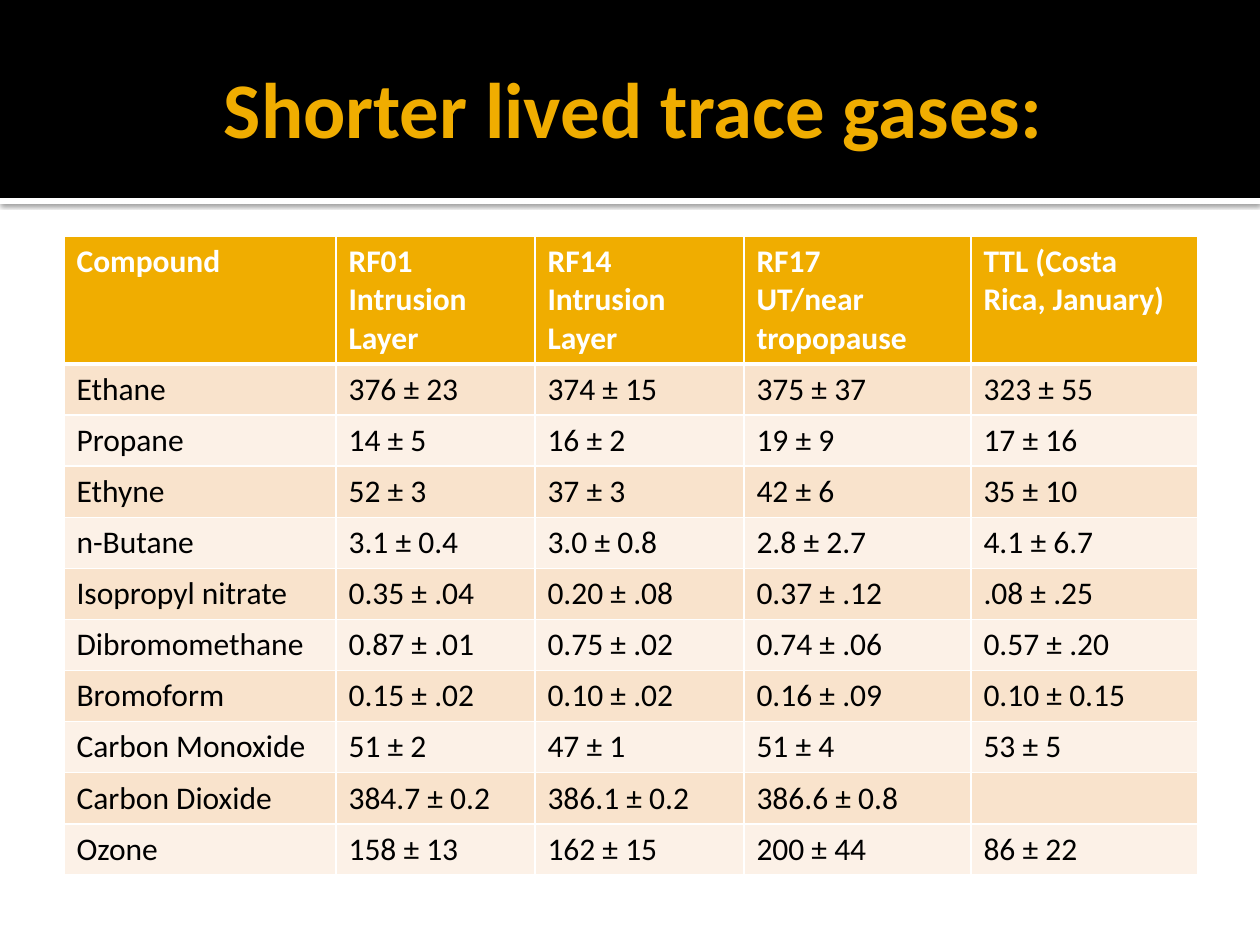
from lxml import etree
from pptx import Presentation
from pptx import util as u
from pptx.dml.color import RGBColor
from pptx.enum import shapes, text
from pptx.oxml.ns import qn

BLACK = RGBColor(0x00, 0x00, 0x00)
WHITE = RGBColor(0xFF, 0xFF, 0xFF)
GOLD = RGBColor(0xF0, 0xAD, 0x00)
PEACH = RGBColor(0xF9, 0xE3, 0xCC)
CREAM = RGBColor(0xFC, 0xF1, 0xE7)

COLUMN_WIDTHS = [272, 199, 209, 227, 227]
HEADER_HEIGHT = 127
ROW_HEIGHT = 51
ROWS = [
    ["Compound", "RF01 Intrusion Layer", "RF14 Intrusion Layer",
     "RF17\nUT/near tropopause", "TTL (Costa Rica, January)"],
    ["Ethane", "376 ± 23", "374 ± 15", "375 ± 37", "323 ± 55"],
    ["Propane", "14 ± 5", "16 ± 2", "19 ± 9", "17 ± 16"],
    ["Ethyne", "52 ± 3", "37 ± 3", "42 ± 6", "35 ± 10"],
    ["n-Butane", "3.1 ± 0.4", "3.0 ± 0.8", "2.8 ± 2.7", "4.1 ± 6.7"],
    ["Isopropyl nitrate", "0.35 ± .04", "0.20 ± .08", "0.37 ± .12", ".08 ± .25"],
    ["Dibromomethane", "0.87 ± .01", "0.75 ± .02", "0.74 ± .06", "0.57 ± .20"],
    ["Bromoform", "0.15 ± .02", "0.10 ± .02", "0.16 ± .09", "0.10 ± 0.15"],
    ["Carbon Monoxide", "51 ± 2", "47 ± 1", "51 ± 4", "53 ± 5"],
    ["Carbon Dioxide", "384.7 ± 0.2", "386.1 ± 0.2", "386.6 ± 0.8", ""],
    ["Ozone", "158 ± 13", "162 ± 15", "200 ± 44", "86 ± 22"],
]


def px(n):
    return u.Emu(round(n * u.Inches(1) / 126))


class Deck:
    font = "Calibri"

    def __init__(self, width, height):
        self.prs = Presentation()
        self.prs.slide_width, self.prs.slide_height = px(width), px(height)
        self.s = self.prs.slides.add_slide(self.prs.slide_layouts[5])

    def style(self, p, size, color, bold):
        p.font.name = self.font
        p.font.size = u.Pt(size)
        p.font.bold = bold
        p.font.color.rgb = color

    def band(self, x, y, w, h, color):
        sp = self.s.shapes.add_shape(shapes.MSO_SHAPE.RECTANGLE, px(x), px(y), px(w), px(h))
        sp.fill.solid()
        sp.fill.fore_color.rgb = color
        sp.line.fill.background()
        sp.shadow.inherit = False
        return sp

    def drop_shadow(self, sp, color, alpha, blur, dist):
        effects = sp._element.spPr.find(qn("a:effectLst"))
        shadow = etree.SubElement(effects, qn("a:outerShdw"), blurRad=str(u.Pt(blur)),
                                  dist=str(u.Pt(dist)), dir="5400000", rotWithShape="0")
        clr = etree.SubElement(shadow, qn("a:srgbClr"), val=str(color))
        etree.SubElement(clr, qn("a:alpha"), val=str(alpha * 1000))

    def title(self, x, y, w, h, words):
        sp = self.s.shapes.title
        self.s.shapes._spTree.append(sp._element)
        sp.left, sp.top, sp.width, sp.height = px(x), px(y), px(w), px(h)
        tf = sp.text_frame
        tf.text = words
        tf.word_wrap = True
        tf.auto_size = text.MSO_AUTO_SIZE.NONE
        tf.vertical_anchor = text.MSO_ANCHOR.MIDDLE
        tf.margin_left = u.Inches(0.1)
        tf.margin_right = tf.margin_top = tf.margin_bottom = u.Inches(0.05)
        p = tf.paragraphs[0]
        p.alignment = text.PP_ALIGN.CENTER
        self.style(p, 45, GOLD, True)

    def borders(self, cell, bottom):
        tcPr = cell._tc.get_or_add_tcPr()
        for i, (side, width) in enumerate([("L", 1), ("R", 1), ("T", 1), ("B", bottom)]):
            ln = etree.Element(qn("a:ln" + side), w=str(u.Pt(width)))
            fill = etree.SubElement(ln, qn("a:solidFill"))
            etree.SubElement(fill, qn("a:srgbClr"), val=str(WHITE))
            tcPr.insert(i, ln)

    def table(self, x, y, widths, heights, rows):
        frame = self.s.shapes.add_table(len(rows), len(widths), px(x), px(y),
                                        px(sum(widths)), px(sum(heights)))
        tbl = frame.table
        for column, w in zip(tbl.columns, widths):
            column.width = px(w)
        for i, (row, h, values) in enumerate(zip(tbl.rows, heights, rows)):
            row.height = px(h)
            header = i == 0
            color = GOLD if header else PEACH if i % 2 else CREAM
            for cell, value in zip(row.cells, values):
                cell.text = value
                cell.fill.solid()
                cell.fill.fore_color.rgb = color
                self.borders(cell, 3 if header else 1)
                for p in cell.text_frame.paragraphs:
                    self.style(p, 18, WHITE if header else BLACK, header)


def main():
    deck = Deck(1260, 945)
    strip = deck.band(0, 198, 1260, 6, WHITE)
    deck.drop_shadow(strip, BLACK, 60, 2.5, 0.8)
    deck.band(0, 0, 1260, 198, BLACK)
    deck.title(63, 21, 1134, 173, "Shorter lived trace gases:")
    heights = [HEADER_HEIGHT] + [ROW_HEIGHT] * (len(ROWS) - 1)
    deck.table(64, 236, COLUMN_WIDTHS, heights, ROWS)
    deck.prs.save("out.pptx")


if __name__ == "__main__":
    main()
